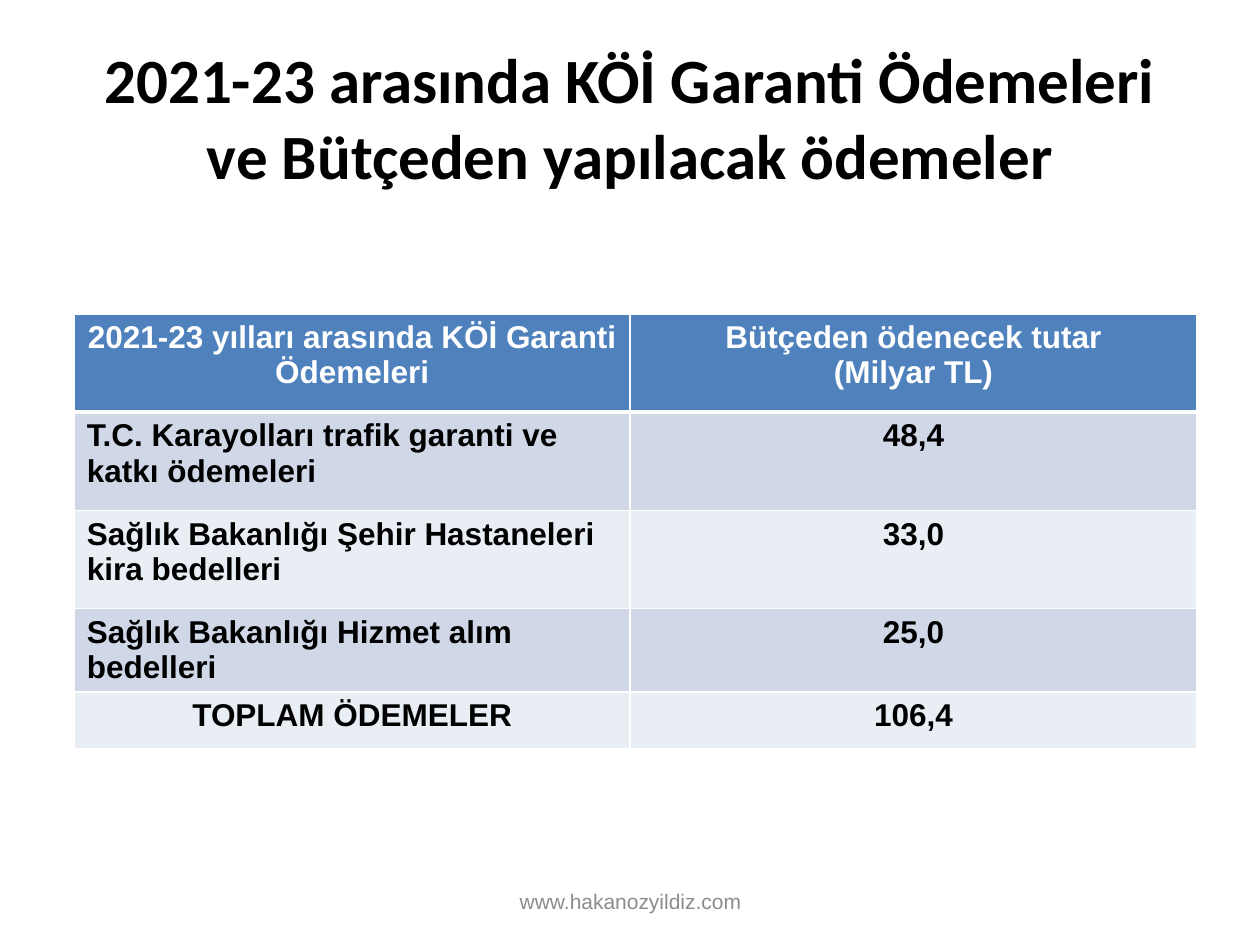
"""Build a slide with a table of guarantee payments from the budget."""
from lxml import etree
from pptx import Presentation
from pptx.dml.color import RGBColor
from pptx.enum.text import MSO_ANCHOR, PP_ALIGN
from pptx.oxml.ns import qn
from pptx.util import Inches, Pt

LEFT, CENTER = PP_ALIGN.LEFT, PP_ALIGN.CENTER
MIDDLE = MSO_ANCHOR.MIDDLE

TITLE = "2021-23 arasında KÖİ Garanti Ödemeleri ve Bütçeden yapılacak ödemeler"
FOOTER = "www.hakanozyildiz.com"
ROWS = [
    (["2021-23 yılları arasında KÖİ Garanti Ödemeleri"],
     ["Bütçeden ödenecek tutar", "(Milyar TL)"]),
    (["T.C. Karayolları trafik garanti ve katkı ödemeleri"], ["48,4"]),
    (["Sağlık Bakanlığı Şehir Hastaneleri kira bedelleri"], ["33,0"]),
    (["Sağlık Bakanlığı Hizmet alım bedelleri"], ["25,0"]),
    (["TOPLAM ÖDEMELER"], ["106,4"]),
]
COL_WIDTHS = [4.41, 4.5]
ROW_HEIGHTS = [0.78, 0.78, 0.78, 0.45, 0.45]
HEADER_FILL = "4F81BD"
BAND_FILLS = ["E9EDF4", "D0D8E8"]


def color(value):
    """Return the colour for a hex string."""
    return RGBColor.from_string(value)


def write(tf, lines, size, font, hex_color, bold=False, align=CENTER):
    """Write each line as a paragraph with one formatted run."""
    tf.word_wrap = True
    for i, line in enumerate(lines):
        p = tf.add_paragraph() if i else tf.paragraphs[0]
        p.alignment = align
        r = p.add_run()
        r.text = line
        r.font.size = Pt(size)
        r.font.name = font
        r.font.bold = bold
        r.font.color.rgb = color(hex_color)


def set_borders(cell, bottom):
    """Draw white borders, with the bottom one of the given width."""
    tc_pr = cell._tc.get_or_add_tcPr()
    widths = {"a:lnL": 1, "a:lnR": 1, "a:lnT": 1, "a:lnB": bottom}
    for i, (tag, width) in enumerate(widths.items()):
        ln = etree.Element(qn(tag), w=str(Pt(width)))
        fill = etree.SubElement(ln, qn("a:solidFill"))
        etree.SubElement(fill, qn("a:srgbClr"), val="FFFFFF")
        tc_pr.insert(i, ln)


def add_payments(s):
    """Add the payments table."""
    frame = s.shapes.add_table(
        len(ROWS), len(COL_WIDTHS), Inches(0.59), Inches(2.49),
        Inches(sum(COL_WIDTHS)), Inches(sum(ROW_HEIGHTS)))
    table = frame.table
    for col, width in zip(table.columns, COL_WIDTHS):
        col.width = Inches(width)
    for row, height in zip(table.rows, ROW_HEIGHTS):
        row.height = Inches(height)
    for i, row in enumerate(ROWS):
        header, total = i == 0, i == len(ROWS) - 1
        for j, lines in enumerate(row):
            cell = table.cell(i, j)
            cell.fill.solid()
            cell.fill.fore_color.rgb = color(
                HEADER_FILL if header else BAND_FILLS[i % 2])
            align = CENTER if header or total or j else LEFT
            write(cell.text_frame, lines, 18, "Arial",
                  "FFFFFF" if header else "000000", True, align)
            set_borders(cell, 3 if i == 0 else 1)


def main():
    """Build and save the slide."""
    prs = Presentation()
    prs.slide_width, prs.slide_height = Inches(10), Inches(7.5)
    s = prs.slides.add_slide(prs.slide_layouts[5])
    title = s.shapes.title
    title.left, title.top = Inches(0.5), Inches(0.3)
    title.width, title.height = Inches(9), Inches(1.25)
    title.text_frame.vertical_anchor = MIDDLE
    write(title.text_frame, [TITLE], 36, "Calibri", "000000", True)
    add_payments(s)
    sp = s.shapes.add_textbox(
        Inches(3.42), Inches(6.95), Inches(3.17), Inches(0.4))
    sp.text_frame.vertical_anchor = MIDDLE
    write(sp.text_frame, [FOOTER], 12, "Arial", "8C8C8C")
    prs.save("out.pptx")


if __name__ == "__main__":
    main()
